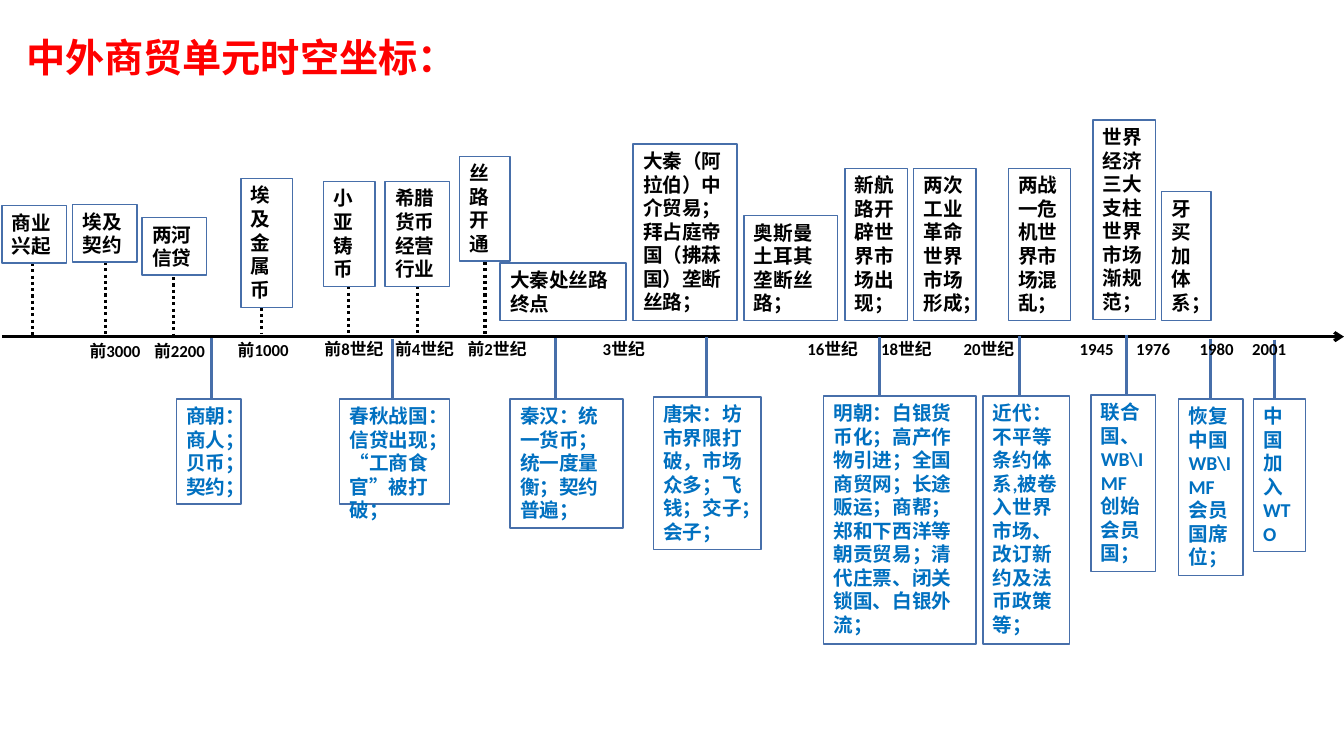
from pptx import Presentation
from pptx.dml.color import RGBColor
from pptx.enum.dml import MSO_LINE
from pptx.enum.shapes import MSO_CONNECTOR, MSO_SHAPE
from pptx.enum.text import MSO_ANCHOR, PP_ALIGN
from pptx.oxml.ns import qn
from pptx.util import Pt
from lxml import etree

PX = 9144  # 100 px to the inch
RECT = MSO_SHAPE.RECTANGLE
STRAIGHT = MSO_CONNECTOR.STRAIGHT
DOT = MSO_LINE.ROUND_DOT
TOP, MIDDLE = MSO_ANCHOR.TOP, MSO_ANCHOR.MIDDLE
LEFT = PP_ALIGN.LEFT
BLACK, RED, BLUE, EDGE = "000000", "FF0000", "0070C0", "476FAA"
color = RGBColor.from_string

deck = Presentation()
deck.slide_width, deck.slide_height = 1333 * PX, 750 * PX
slide = deck.slides.add_slide(deck.slide_layouts[6])
shapes = slide.shapes


def write(shape, text, size, hue, font="Calibri", anchor=TOP):
    frame = shape.text_frame
    frame.text = text
    frame.word_wrap = True
    frame.vertical_anchor = anchor
    for para in frame.paragraphs:
        para.alignment = LEFT
        for run in para.runs:
            run.font.name = font
            run.font.size = Pt(size)
            run.font.bold = True
            run.font.color.rgb = color(hue)


def draw_line(x1, y1, x2, y2, hue):
    link = shapes.add_connector(STRAIGHT, x1 * PX, y1 * PX, x2 * PX, y2 * PX)
    link.line.color.rgb = color(hue)
    link.line.width = Pt(2.25)
    etree.SubElement(link._element.spPr, qn("a:effectLst"))
    return link


# Title
title = shapes.add_textbox(16 * PX, 26 * PX, 656 * PX, 60 * PX)
write(title, "中外商贸单元时空坐标：", 28, RED, "Arial", MIDDLE)

# Time axis
axis = draw_line(2, 334, 1333, 334, BLACK)
etree.SubElement(axis.line._get_or_add_ln(), qn("a:tailEnd"), type="arrow")

# Dotted stems above the axis: x, top, bottom
for x, top, end in [
    (32, 261, 334), (105, 260, 333), (172, 275, 335), (259, 305, 331),
    (346, 284, 335), (414, 284, 331), (481, 260, 333),
]:
    stem = draw_line(x, top, x, end, BLACK)
    stem.line.dash_style = DOT

# Solid stems below the axis: x, top, bottom
for x, top, end in [
    (210, 335, 395), (389, 336, 396), (551, 335, 395), (701, 334, 393),
    (872, 334, 393), (1011, 333, 392), (1117, 332, 391), (1201, 336, 396),
    (1264, 337, 396),
]:
    draw_line(x, top, x, end, EDGE)

# Dates: left, top, width, text
for x, y, wide, text in [
    (79, 333, 84, "前3000"), (143, 333, 84, "前2200"),
    (226, 332, 84, "前1000"), (312, 331, 84, "前8世纪"),
    (382, 331, 84, "前4世纪"), (454, 331, 84, "前2世纪"),
    (588, 331, 84, "3世纪"), (791, 331, 84, "16世纪"),
    (864, 331, 84, "18世纪"), (946, 331, 84, "20世纪"),
    (1061, 331, 84, "1945"), (1117, 331, 63, "1976"),
    (1180, 331, 63, "1980"), (1232, 331, 63, "2001"),
]:
    date = shapes.add_textbox(x * PX, y * PX, wide * PX, 30 * PX)
    write(date, text, 12, BLACK)

# World events above the axis: left, top, width, height, text
world = [
    (2, 204, 64, 57, "商业兴起"),
    (72, 203, 64, 57, "埃及契约"),
    (141, 216, 64, 57, "两河信贷"),
    (239, 177, 51, 128, "埃及金属币"),
    (321, 180, 51, 104, "小亚铸币"),
    (382, 180, 64, 104, "希腊货币经营行业"),
    (456, 155, 50, 104, "丝路开通"),
    (496, 261, 125, 57, "大秦处丝路终点"),
    (628, 143, 103, 175,
     "大秦（阿拉伯）中介贸易；拜占庭帝国（拂菻国）垄断丝路；"),
    (738, 214, 93, 104, "奥斯曼土耳其垄断丝路；"),
    (838, 167, 62, 151, "新航路开辟世界市场出现；"),
    (906, 167, 62, 151, "两次工业革命世界市场形成；"),
    (1000, 167, 62, 151, "两战一危机世界市场混乱；"),
    (1084, 119, 62, 198, "世界经济三大支柱世界市场渐规范；"),
    (1152, 190, 49, 128, "牙买加体系；"),
]

# Chinese events below the axis
china = [
    (175, 396, 64, 104, "商朝：商人；\n贝币；契约；"),
    (337, 396, 109, 104, "春秋战国：信贷出现；“工商食官”被打破；"),
    (506, 396, 112, 128, "秦汉：统一货币；统一度量衡；契约普遍；"),
    (648, 394, 107, 151,
     "唐宋：坊市界限打破，市场众多；飞钱；交子；会子；"),
    (817, 393, 151, 246,
     "明朝：白银货币化；高产作物引进；全国商贸网；长途贩运；商帮；"
     "郑和下西洋等朝贡贸易；清代庄票、闭关锁国、白银外流；"),
    (975, 393, 86, 246,
     "近代：不平等条约体系,被卷入世界市场、改订新约及法币政策等；"),
    (1082, 392, 64, 175, "联合国、WB\\IMF创始会员国；"),
    (1169, 396, 64, 175, "恢复中国WB\\IMF会员国席位；"),
    (1243, 396, 52, 151, "中国加入WTO"),
]

for events, hue in [(world, BLACK), (china, BLUE)]:
    for x, y, wide, high, text in events:
        box = shapes.add_shape(RECT, x * PX, y * PX, wide * PX, high * PX)
        box.shadow.inherit = False
        box.fill.background()
        box.line.color.rgb = color(EDGE)
        box.line.width = Pt(1)
        write(box, text, 14, hue)

deck.save("out.pptx")
